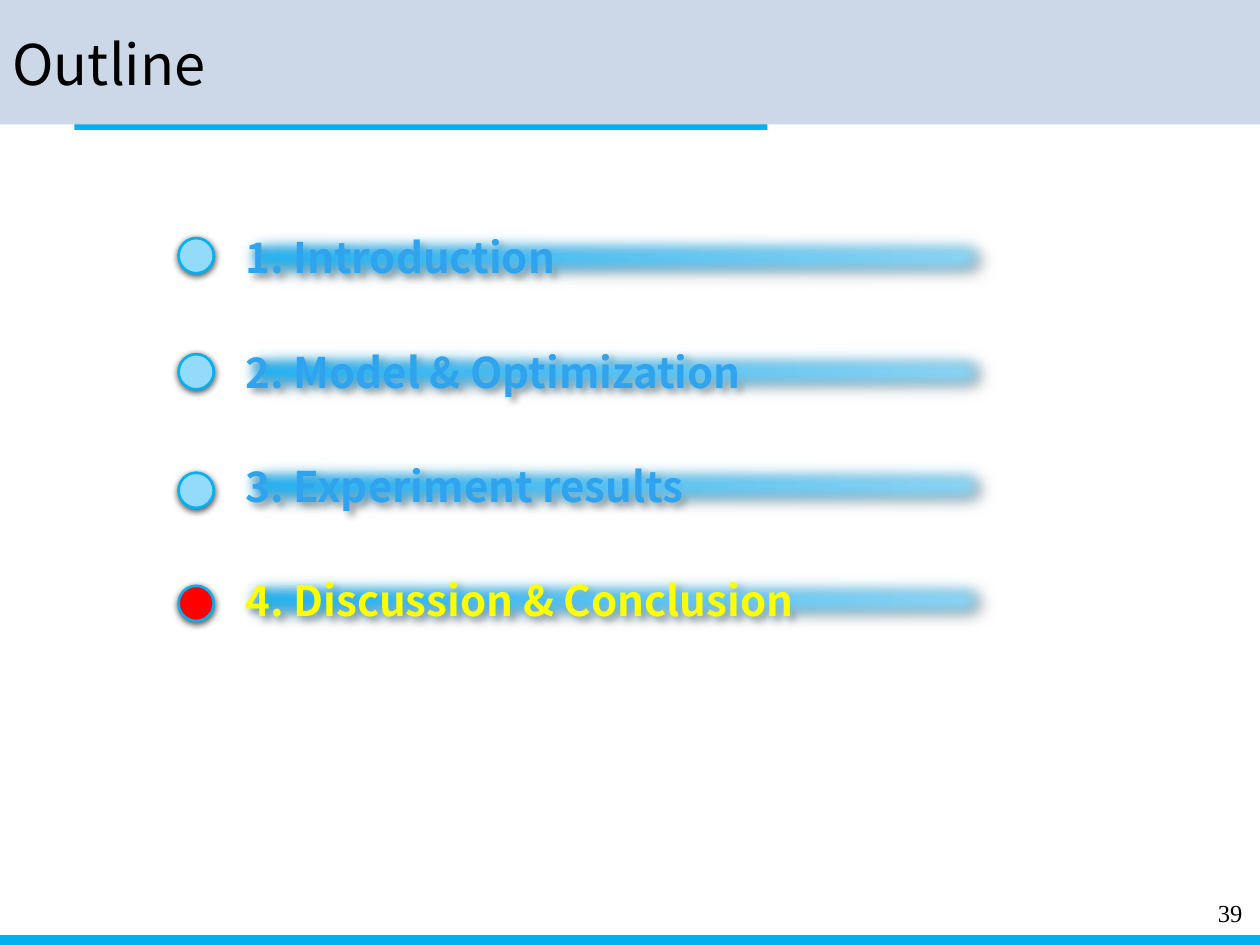
from lxml import etree
from pptx import Presentation
from pptx.dml.color import RGBColor
from pptx.enum import shapes, text
from pptx.oxml.ns import qn
from pptx.util import Cm, Pt

SANS = "Noto Sans CJK SC"
ACCENT = "00B0F0"
WIDTH, HEIGHT = 25.4, 19.05
ITEMS = [
    ("1. Introduction", 4.8),
    ("2. Model & Optimization", 7.14),
    ("3. Experiment results", 9.53),
    ("4. Discussion & Conclusion", 11.81),
]
CURRENT = 3


def colour(value):
    return RGBColor.from_string(value)


def add_shape(slide, kind, box, fill=None, line=None, line_width=1.0):
    shape = slide.shapes.add_shape(kind, *(Cm(length) for length in box))
    shape.shadow.inherit = False
    if fill:
        shape.fill.solid()
        shape.fill.fore_color.rgb = colour(fill)
    if line:
        shape.line.color.rgb = colour(line)
        shape.line.width = Pt(line_width)
    else:
        shape.line.fill.background()
    return shape


def add_effects(shape, opacity, distance, angle, soft_edge=0):
    """Give the shape a black outer shadow and, if asked, a soft edge in points."""
    effects = shape._element.spPr.find(qn("a:effectLst"))
    shadow = etree.SubElement(
        effects, qn("a:outerShdw"), blurRad=str(Pt(4)), dist=str(Pt(distance)),
        dir=str(angle * 60000), algn="ctr", rotWithShape="0")
    black = etree.SubElement(shadow, qn("a:srgbClr"), val="000000")
    etree.SubElement(black, qn("a:alpha"), val=str(opacity * 1000))
    if soft_edge:
        etree.SubElement(effects, qn("a:softEdge"), rad=str(Pt(soft_edge)))


def write(shape, words, size, font=SANS, ink="000000", bold=False):
    frame = shape.text_frame
    frame.word_wrap = True
    frame.vertical_anchor = text.MSO_ANCHOR.MIDDLE
    paragraph = frame.paragraphs[0]
    paragraph.text = words
    paragraph.alignment = text.PP_ALIGN.LEFT
    paragraph.font.name = font
    paragraph.font.size = Pt(size)
    paragraph.font.bold = bold
    paragraph.font.color.rgb = colour(ink)


def add_label(slide, box, words, size, font=SANS):
    label = slide.shapes.add_textbox(*(Cm(length) for length in box))
    write(label, words, size, font)


def add_header(slide, left, top, width, height):
    rectangle = shapes.MSO_SHAPE.RECTANGLE
    add_shape(slide, rectangle, (left + 1.5, top + height - 0.02, 13.97, 0.13), ACCENT)
    add_shape(slide, rectangle, (left, top, width, height), "CCD8E7")
    add_label(slide, (left, top + 0.46, 5.33, 1.63), "Outline", 32)


def add_footer(slide, left, top, width, height):
    add_shape(slide, shapes.MSO_SHAPE.RECTANGLE, (left, top, width, height),
              ACCENT, ACCENT, 1.25)
    add_label(slide, (left + width - 1.1, top - 0.91, 1.1, 0.86), "39", 14,
              "Times New Roman")


def add_bar(slide, box, words, ink):
    bar = add_shape(slide, shapes.MSO_SHAPE.RECTANGLE, box, line="B5D2E2", line_width=0.75)
    bar.fill.gradient()
    bar.fill.gradient_angle = 180
    for stop, shade in zip(bar.fill.gradient_stops, ("8BD8FA", "18B0F6")):
        stop.color.rgb = colour(shade)
    add_effects(bar, opacity=40, distance=3, angle=45, soft_edge=10)
    write(bar, words, 24, ink=ink, bold=True)


def add_bullet(slide, left, top, diameter, fill):
    bullet = add_shape(slide, shapes.MSO_SHAPE.OVAL, (left, top, diameter, diameter),
                       fill, ACCENT, 1.5)
    add_effects(bullet, opacity=68, distance=1.2, angle=90)


def add_agenda(slide, left, top, width, pitch):
    for index, (words, bullet_top) in enumerate(ITEMS):
        current = index == CURRENT
        add_bullet(slide, left, bullet_top, 0.71, "FF0000" if current else "93DAFB")
        add_bar(slide, (left + 1.1, top + index * pitch, width - 1.1, 1.27), words,
                "FFFF00" if current else "2FA3EE")


def main():
    presentation = Presentation()
    presentation.slide_width, presentation.slide_height = Cm(WIDTH), Cm(HEIGHT)
    slide = presentation.slides.add_slide(presentation.slide_layouts[6])
    add_header(slide, 0, 0, WIDTH, 2.51)
    add_footer(slide, 0, HEIGHT - 0.18, WIDTH, 0.18)
    add_agenda(slide, 3.6, 4.55, 16.5, 2.3)
    presentation.save("out.pptx")


if __name__ == "__main__":
    main()
